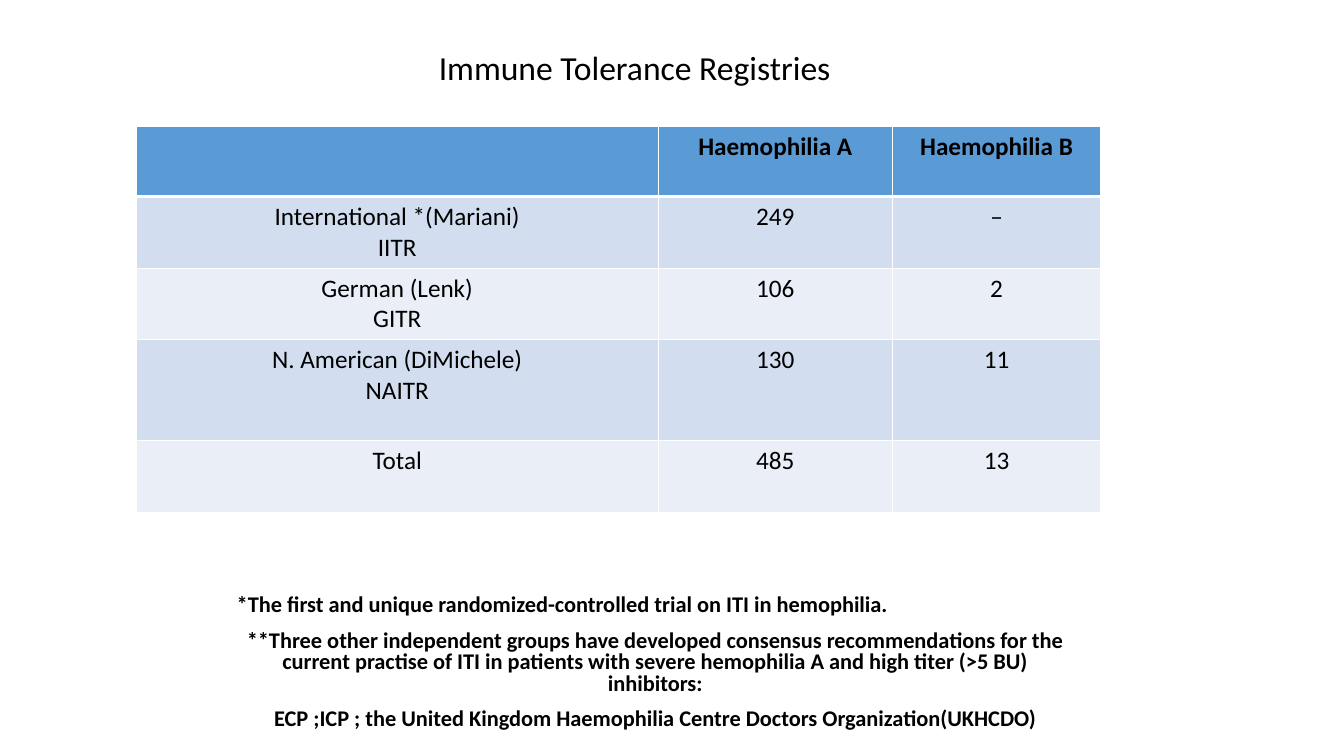
import lxml.etree
import pptx
import pptx.dml.color
import pptx.enum.text
import pptx.oxml.ns
import pptx.util
from dataclasses import dataclass

Inches = pptx.util.Inches
CENTER = pptx.enum.text.PP_ALIGN.CENTER
LEFT = pptx.enum.text.PP_ALIGN.LEFT

# Content
TITLE = "Immune Tolerance Registries"
REGISTRIES = [
    ("", "Haemophilia A", "Haemophilia B"),
    ("International *(Mariani)\nIITR", "249", "–"),
    ("German (Lenk)\nGITR", "106", "2"),
    ("N. American (DiMichele)\nNAITR", "130", "11"),
    ("Total", "485", "13"),
]
COLUMN_WIDTHS = [5.18, 2.32, 2.07]
ROW_HEIGHTS = [0.7, 0.71, 0.71, 1.0, 0.71]
NOTES = [
    ("*The first and unique randomized-controlled trial on ITI in hemophilia.", LEFT),
    ("**Three other independent groups have developed consensus recommendations "
     "for the current practise of ITI in patients with severe hemophilia A and "
     "high titer (>5 BU) inhibitors:", CENTER),
    ("ECP ;ICP ; the United Kingdom Haemophilia Centre Doctors "
     "Organization(UKHCDO)", CENTER),
]


@dataclass(frozen=True)
class Theme:
    font: str = "Calibri"
    text: str = "000000"
    header: str = "5B9BD5"
    bands: tuple = ("D2DEEF", "EAEFF7")
    border: str = "FFFFFF"
    title_size: int = 24
    table_size: int = 18
    note_size: int = 16


THEME = Theme()


def color(value):
    return pptx.dml.color.RGBColor.from_string(value)


def format_paragraph(paragraph, size, bold=False, align=CENTER):
    paragraph.alignment = align
    for run in paragraph.runs:
        run.font.name = THEME.font
        run.font.size = pptx.util.Pt(size)
        run.font.bold = bold
        run.font.color.rgb = color(THEME.text)


def set_borders(cell, widths):
    """Border lines come before the fill in the cell properties."""
    properties = cell._tc.get_or_add_tcPr()
    for index, (side, width) in enumerate(widths.items()):
        line = lxml.etree.Element(pptx.oxml.ns.qn(f"a:ln{side}"),
                                  w=str(pptx.util.Pt(width)))
        fill = lxml.etree.SubElement(line, pptx.oxml.ns.qn("a:solidFill"))
        lxml.etree.SubElement(fill, pptx.oxml.ns.qn("a:srgbClr"), val=THEME.border)
        properties.insert(index, line)


def add_title(slide):
    title = slide.shapes.title
    title.left, title.top = Inches(2.17), Inches(0.3)
    title.width, title.height = Inches(8.25), Inches(0.62)
    title.text_frame.text = TITLE
    title.text_frame.vertical_anchor = pptx.enum.text.MSO_ANCHOR.BOTTOM
    paragraph = title.text_frame.paragraphs[0]
    paragraph.line_spacing = 0.9
    format_paragraph(paragraph, THEME.title_size)


def add_registry_table(slide):
    table = slide.shapes.add_table(
        len(REGISTRIES), len(COLUMN_WIDTHS), Inches(1.35), Inches(1.25),
        Inches(sum(COLUMN_WIDTHS)), Inches(sum(ROW_HEIGHTS))).table
    for column, width in zip(table.columns, COLUMN_WIDTHS):
        column.width = Inches(width)
    for row_index, values in enumerate(REGISTRIES):
        table.rows[row_index].height = Inches(ROW_HEIGHTS[row_index])
        is_header = row_index == 0
        fill = THEME.header if is_header else THEME.bands[(row_index - 1) % 2]
        # A thick rule separates the header from the first registry
        borders = {"L": 1, "R": 1, "T": 3 if row_index == 1 else 1,
                   "B": 3 if is_header else 1}
        for column_index, value in enumerate(values):
            cell = table.cell(row_index, column_index)
            cell.text_frame.text = value
            cell.fill.solid()
            cell.fill.fore_color.rgb = color(fill)
            set_borders(cell, borders)
            for paragraph in cell.text_frame.paragraphs:
                format_paragraph(paragraph, THEME.table_size, bold=is_header)


def add_notes(slide):
    box = slide.shapes.add_textbox(Inches(2.25), Inches(5.86), Inches(8.5), Inches(1.47))
    frame = box.text_frame
    frame.word_wrap = True
    frame.text = "\n".join(text for text, align in NOTES)
    for index, (paragraph, (text, align)) in enumerate(zip(frame.paragraphs, NOTES)):
        paragraph.line_spacing = 0.8
        paragraph.space_before = pptx.util.Pt(10 if index else 0)
        format_paragraph(paragraph, THEME.note_size, bold=True, align=align)


def main():
    presentation = pptx.Presentation()
    presentation.slide_width = Inches(13.33)
    presentation.slide_height = Inches(7.5)
    slide = presentation.slides.add_slide(presentation.slide_layouts[5])
    add_title(slide)
    add_registry_table(slide)
    add_notes(slide)
    presentation.save("out.pptx")


if __name__ == "__main__":
    main()
